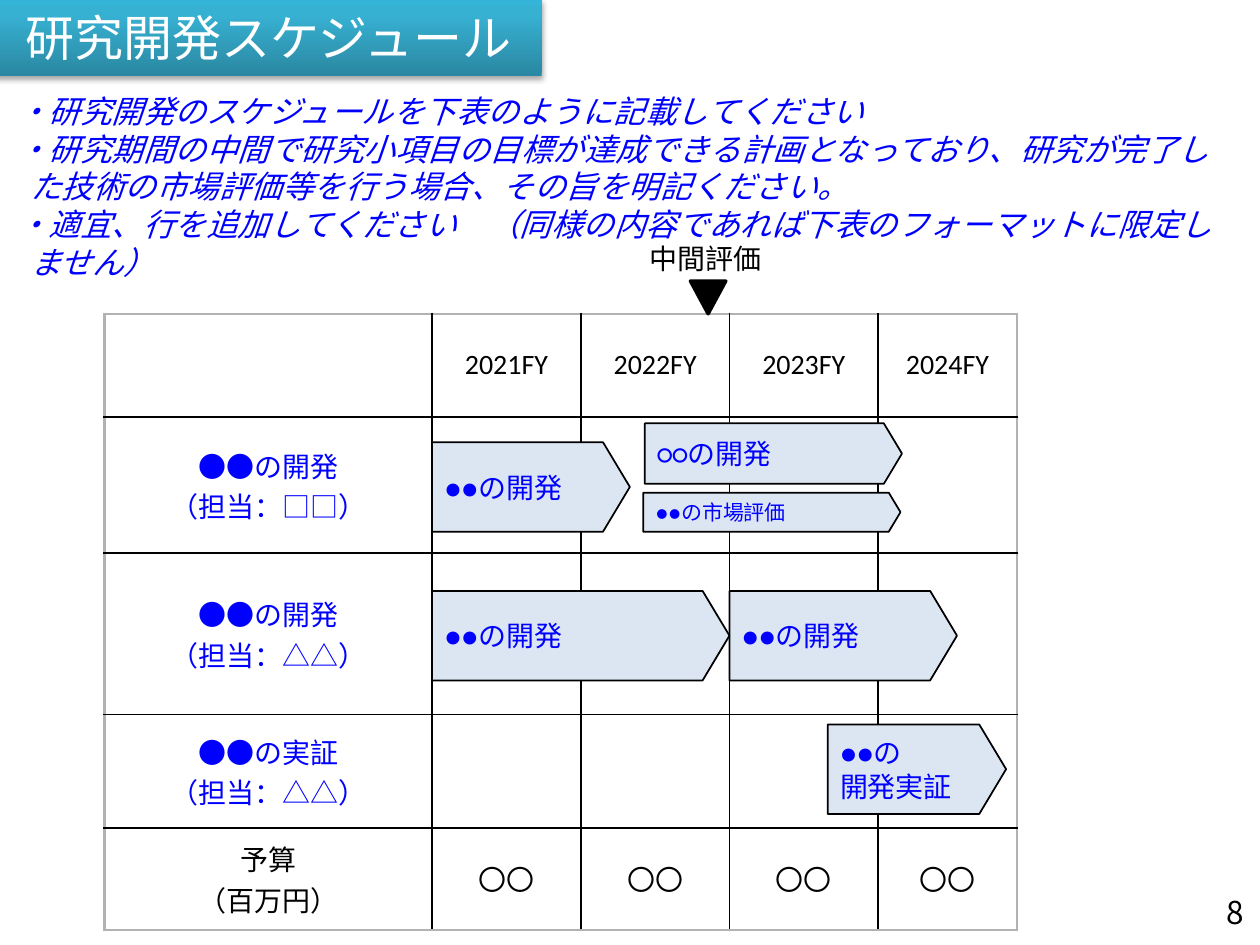
from lxml import etree
from pptx import Presentation
from pptx.dml.color import RGBColor
from pptx.enum.shapes import MSO_SHAPE
from pptx.enum.text import MSO_ANCHOR, MSO_AUTO_SIZE, PP_ALIGN
from pptx.oxml import parse_xml
from pptx.util import Inches, Pt

MIDDLE, TOP = MSO_ANCHOR.MIDDLE, MSO_ANCHOR.TOP
LEFT, CENTER, RIGHT = PP_ALIGN.LEFT, PP_ALIGN.CENTER, PP_ALIGN.RIGHT
PENTAGON, TRIANGLE = MSO_SHAPE.PENTAGON, MSO_SHAPE.ISOSCELES_TRIANGLE
NS = 'xmlns:a="http://schemas.openxmlformats.org/drawingml/2006/main"'
A = "{http://schemas.openxmlformats.org/drawingml/2006/main}"
CALIBRI, NOTO = "Calibri", "Noto Sans CJK JP"
BLACK, BLUE, PALE, GREY = "000000", "0000FF", "DCE6F2", "B2B2B2"


def rgb(value):
    return RGBColor.from_string(value)


def write(tf, text, size=16, font=CALIBRI, color=BLACK, align=LEFT, anchor=MIDDLE,
          italic=False, hang=0, inset=None, wrap=True):
    """Fill a text frame, one paragraph for each line of text."""
    tf.word_wrap = wrap
    tf.vertical_anchor = anchor
    if inset is not None:
        tf.margin_left = tf.margin_right = tf.margin_top = tf.margin_bottom = inset
    for i, line in enumerate(text.split("\n")):
        p = tf.paragraphs[0] if i == 0 else tf.add_paragraph()
        p.alignment = align
        if hang:
            pPr = p._p.get_or_add_pPr()
            pPr.set("marL", str(Inches(hang)))
            pPr.set("indent", str(-Inches(hang)))
        r = p.add_run()
        r.text = line
        r.font.size, r.font.name, r.font.italic = Pt(size), font, italic
        r.font.color.rgb = rgb(color)
        etree.SubElement(r._r.get_or_add_rPr(), A + "ea").set("typeface", font)


prs = Presentation()
prs.slide_width, prs.slide_height = Inches(10), Inches(7.5)
slide = prs.slides.add_slide(prs.slide_layouts[5])
shapes = slide.shapes

# Title with gradient and shadow
title = shapes.title
title.left, title.top = Inches(-0.04), Inches(-0.01)
title.width, title.height = Inches(4.34), Inches(0.61)
write(title.text_frame, "研究開発スケジュール", size=28, color="FFFFFF", align=CENTER)
title.text_frame.auto_size = MSO_AUTO_SIZE.NONE
stops = "".join(f'<a:gs pos="{pos}000"><a:srgbClr val="{c}"/></a:gs>'
                for pos, c in [(0, "2A88A2"), (80, "37B1D2"), (100, "34B4D6")])
spPr = title._element.spPr
spPr.append(parse_xml(f'<a:gradFill {NS} rotWithShape="1"><a:gsLst>{stops}</a:gsLst>'
                      '<a:lin ang="16200000" scaled="0"/></a:gradFill>'))
spPr.append(parse_xml(
    f'<a:effectLst {NS}><a:outerShdw blurRad="{Pt(3.1)}" dist="{Pt(1.8)}" dir="5400000" '
    'rotWithShape="0"><a:srgbClr val="000000"><a:alpha val="35000"/></a:srgbClr>'
    '</a:outerShdw></a:effectLst>'))

# Schedule table
X, Y = 0.83, 2.49
YEAR = 1.18
cols = [2.6, YEAR, YEAR, YEAR, 1.1]
rows = [0.82, 1.08, 1.28, 0.9, 0.81]
content = [
    ["", "2021FY", "2022FY", "2023FY", "2024FY"],
    ["●●の開発\n（担当：□□）"],
    ["●●の開発\n（担当：△△）"],
    ["●●の実証\n（担当：△△）"],
    ["予算\n（百万円）"] + ["〇〇"] * 4,
]
last = len(rows) - 1
gf = shapes.add_table(len(rows), len(cols), Inches(X), Inches(Y),
                      Inches(sum(cols)), Inches(sum(rows)))
table = gf.table
table.first_row = table.horz_banding = False
for i, width in enumerate(cols):
    table.columns[i].width = Inches(width)
for i, height in enumerate(rows):
    table.rows[i].height = Inches(height)
    for j in range(len(cols)):
        cell = table.cell(i, j)
        tcPr = cell._tc.get_or_add_tcPr()
        sides = [("L", j == 0), ("R", j == last), ("T", i == 0), ("B", i == last)]
        for side, outer in sides:
            color, weight = (GREY, 1.5) if outer else (BLACK, 1)
            tcPr.append(parse_xml(
                f'<a:ln{side} {NS} w="{Pt(weight)}"><a:solidFill><a:srgbClr val="{color}"/>'
                f'</a:solidFill></a:ln{side}>'))
        cell.fill.background()
        cell.margin_left = cell.margin_right = cell.margin_top = cell.margin_bottom = 0
        cell.vertical_anchor = MIDDLE
        if j < len(content[i]) and content[i][j]:
            write(cell.text_frame, content[i][j], font=CALIBRI if i == 0 else NOTO,
                  color=BLUE if 0 < i < last else BLACK, align=CENTER, anchor=None, wrap=None)

# Task arrows: start and end in years from the first year column, top and height in inches
tasks = [
    ("●●の市場評価", 1.42, 3.15, 3.91, 0.31, 12),
    ("●●の開発", 2, 3.53, 4.69, 0.71, 16),
    ("●●の開発", 0, 1.33, 3.51, 0.71, 16),
    ("●●の開発", 0, 2, 4.69, 0.71, 16),
    ("●●の\n開発実証", 2.66, 3.86, 5.75, 0.71, 16),
    ("○○の開発", 1.43, 3.16, 3.36, 0.48, 16),
]
for text, start, end, top, height, size in tasks:
    sp = shapes.add_shape(PENTAGON, Inches(X + cols[0] + start * YEAR), Inches(top),
                          Inches((end - start) * YEAR), Inches(height))
    sp.adjustments[0] = 0.3
    sp.shadow.inherit = False
    sp.fill.solid()
    sp.fill.fore_color.rgb = rgb(PALE)
    sp.line.color.rgb = rgb(BLACK)
    sp.line.width = Pt(1)
    write(sp.text_frame, text, size=size, color=BLUE, hang=0.1)

# Mid-term evaluation marker
sp = shapes.add_shape(TRIANGLE, Inches(5.48), Inches(2.23), Inches(0.28), Inches(0.26))
sp.rotation = 180
sp.shadow.inherit = False
sp.fill.solid()
sp.fill.fore_color.rgb = rgb(BLACK)
sp.line.color.rgb = rgb(BLACK)
sp.line.width = Pt(2)
sp = shapes.add_textbox(Inches(5.06), Inches(1.87), Inches(1.1), Inches(0.37))
write(sp.text_frame, "中間評価", anchor=TOP, wrap=False)

# Instructions
notes = [
    "・研究開発のスケジュールを下表のように記載してください",
    "・研究期間の中間で研究小項目の目標が達成できる計画となっており、研究が完了した"
    "技術の市場評価等を行う場合、その旨を明記ください。",
    "・適宜、行を追加してください　（同様の内容であれば下表のフォーマットに限定しません）",
]
sp = shapes.add_textbox(Inches(0.04), Inches(0.68), Inches(9.83), Inches(1.31))
write(sp.text_frame, "\n".join(notes), size=18, color=BLUE, anchor=TOP, italic=True, hang=0.1)

# Page number
sp = shapes.add_textbox(Inches(9.29), Inches(7.11), Inches(0.58), Inches(0.25))
write(sp.text_frame, "8", size=18, font=NOTO, align=RIGHT, inset=0, wrap=False)

prs.save("out.pptx")
